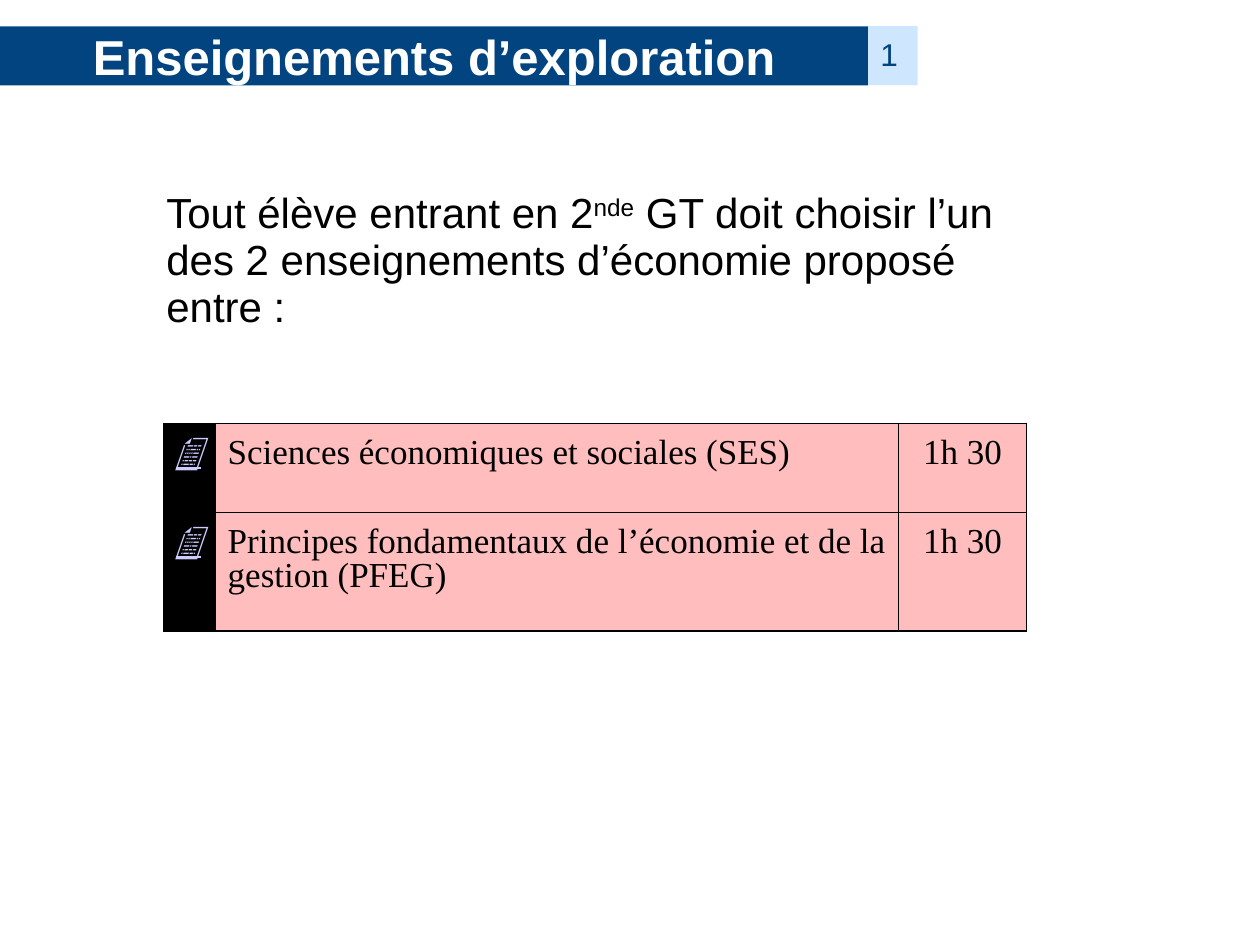
"""Build a slide presenting the two economics exploration courses."""
from lxml import etree
from pptx import Presentation
from pptx import util as u
from pptx.dml.color import RGBColor
from pptx.enum import shapes, text
from pptx.oxml.ns import qn

NAVY = RGBColor(0x02, 0x44, 0x80)
PALE_BLUE = RGBColor(0xCE, 0xE7, 0xFE)
PINK = RGBColor(0xFF, 0xBD, 0xBD)
LILAC = RGBColor(0xCC, 0xCC, 0xFF)
BLACK = RGBColor(0, 0, 0)
WHITE = RGBColor(0xFF, 0xFF, 0xFF)


class SlideMaker:
    """Hold the fonts and the current slide, and add its elements."""

    sans, serif = "Arial", "Times New Roman"

    def __init__(self, prs):
        self.s = prs.slides.add_slide(prs.slide_layouts[1])

    def place(self, sp, box):
        sp.left, sp.top, sp.width, sp.height = (u.Cm(v) for v in box)

    def fill(self, item, color):
        item.fill.solid()
        item.fill.fore_color.rgb = color

    def format(self, p, size, color, font=None, align=text.PP_ALIGN.LEFT, spacing=1.0):
        p.alignment, p.line_spacing, p.space_before = align, spacing, u.Pt(0)
        for r in p.runs:
            r.font.name = font or self.sans
            r.font.size = u.Pt(size)
            r.font.color.rgb = color

    def title(self, box, words):
        sp = self.s.shapes.title
        self.place(sp, box)
        self.fill(sp, NAVY)
        tf = sp.text_frame
        tf.text = words
        tf.auto_size = text.MSO_AUTO_SIZE.NONE
        tf.vertical_anchor = text.MSO_ANCHOR.MIDDLE
        p = tf.paragraphs[0]
        self.format(p, 28, WHITE, align=text.PP_ALIGN.CENTER)
        p.runs[0].font.bold = True

    def page_number(self, box, words):
        sp = self.s.shapes.add_shape(shapes.MSO_SHAPE.RECTANGLE, *(u.Cm(v) for v in box))
        sp.shadow.inherit = False
        sp.line.fill.background()
        self.fill(sp, PALE_BLUE)
        tf = sp.text_frame
        tf.text = words
        tf.vertical_anchor = text.MSO_ANCHOR.MIDDLE
        self.format(tf.paragraphs[0], 18, NAVY, spacing=0.93)

    def body(self, box, before, raised, after):
        sp = self.s.placeholders[1]
        self.place(sp, box)
        tf = sp.text_frame
        tf.auto_size = text.MSO_AUTO_SIZE.NONE
        p = tf.paragraphs[0]
        for words in (before, raised, after):
            p.add_run().text = words
        pPr = p._p.get_or_add_pPr()
        pPr.set("marL", "0")
        pPr.set("indent", "0")
        etree.SubElement(pPr, qn("a:buNone"))
        self.format(p, 24, BLACK, spacing=0.93)
        p.runs[1].font._element.set("baseline", "30000")

    def borders(self, cell):
        tcPr = cell._tc.get_or_add_tcPr()
        for i, side in enumerate("LRTB"):
            ln = etree.Element(qn(f"a:ln{side}"), w=str(u.Pt(0.75)))
            solid = etree.SubElement(ln, qn("a:solidFill"))
            etree.SubElement(solid, qn("a:srgbClr"), val=str(BLACK))
            tcPr.insert(i, ln)

    def table(self, left, top, widths, heights, rows):
        frame = self.s.shapes.add_table(
            len(rows), len(widths), u.Cm(left), u.Cm(top), u.Cm(sum(widths)), u.Cm(sum(heights)))
        table = frame.table
        table.first_row = table.horz_banding = False
        for column, width in zip(table.columns, widths):
            column.width = u.Cm(width)
        for row, height, values in zip(table.rows, heights, rows):
            row.height = u.Cm(height)
            for i, (cell, words) in enumerate(zip(row.cells, values)):
                self.cell(cell, words, i)

    def cell(self, cell, words, column):
        cell.text = words
        cell.margin_left = cell.margin_right = u.Cm(0.25)
        cell.margin_top, cell.margin_bottom = u.Cm(0.3 if column == 0 else 0.28), u.Cm(0.13)
        self.fill(cell, BLACK if column == 0 else PINK)
        self.borders(cell)
        p = cell.text_frame.paragraphs[0]
        if column == 0:
            self.format(p, 20, LILAC, spacing=0.84)
            p.runs[0].font.italic = p.runs[0].font.underline = True
        else:
            align = text.PP_ALIGN.CENTER if column == 2 else text.PP_ALIGN.LEFT
            self.format(p, 20, BLACK, self.serif, align, 0.87)


def main():
    prs = Presentation()
    prs.slide_width, prs.slide_height = u.Cm(25.4), u.Cm(19.05)
    maker = SlideMaker(prs)
    maker.title((0, 0.53, 17.5, 1.19), "Enseignements d’exploration")
    maker.page_number((17.5, 0.53, 1, 1.19), "1")
    maker.body((3.1, 3.73, 17.4, 3.1), "Tout élève entrant en 2", "nde",
               " GT doit choisir l’un des 2 enseignements d’économie proposé entre :")
    maker.table(3.3, 8.53, (1.04, 13.77, 2.59), (1.8, 2.39), (
        ("📄", "Sciences économiques et sociales (SES)", "1h 30"),
        ("📄", "Principes fondamentaux de l’économie et de la gestion (PFEG)", "1h 30"),
    ))
    prs.save("out.pptx")


if __name__ == "__main__":
    main()
